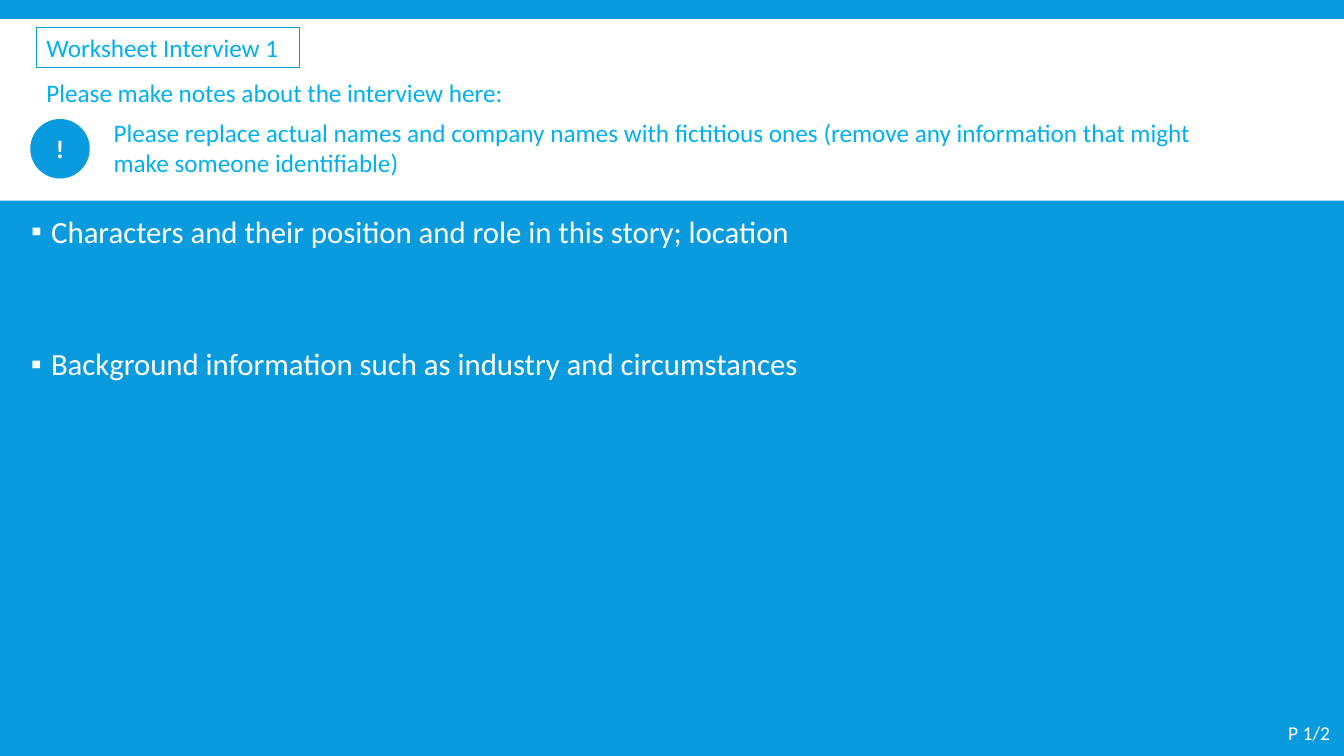
from dataclasses import dataclass

from lxml import etree
from pptx import Presentation
from pptx import util as u
from pptx.dml.color import RGBColor
from pptx.enum import shapes, text
from pptx.oxml import ns

BLUE = RGBColor(0x09, 0x9B, 0xDD)
SKY = RGBColor(0x00, 0xB0, 0xF0)
WHITE = RGBColor(0xFF, 0xFF, 0xFF)


@dataclass(frozen=True)
class Area:
    left: float
    top: float
    width: float
    height: float

    def lengths(self) -> tuple:
        return tuple(u.Pt(n) for n in (self.left, self.top, self.width, self.height))


@dataclass(frozen=True)
class Label:
    wording: str
    area: Area
    size: float = 18
    color: RGBColor = SKY
    inset: float = 3.6
    wrap: bool = True


@dataclass(frozen=True)
class Question:
    wording: str
    area: Area


BAND = Area(0, 13.7, 960, 129.6)
HEADING = Area(26, 19.4, 188, 29)
WARNING_SIGN = Area(21.6, 85, 42.5, 42.5)
LABELS = [
    Label("Please make notes about the interview here:", Area(26, 52, 351, 29)),
    Label("Please replace actual names and company names with fictitious ones "
          "(remove any information that might make someone identifiable)",
          Area(74, 80, 802, 51)),
    Label("P 1/2", Area(913, 508, 47, 32), size=14, color=WHITE, inset=7.2, wrap=False),
]
QUESTIONS = [
    Question("Characters and their position and role in this story; location",
             Area(15, 151, 770, 99)),
    Question("Background information such as industry and circumstances",
             Area(15, 245.5, 770, 68)),
]


def place(box, area: Area) -> None:
    box.left, box.top, box.width, box.height = area.lengths()


def write(box, wording: str, *, size: float = 18, color: RGBColor = SKY,
          bold: bool = False, align=text.PP_ALIGN.LEFT, anchor=text.MSO_ANCHOR.TOP,
          inset: float = 3.6, wrap: bool = True):
    frame = box.text_frame
    frame.word_wrap = wrap
    frame.auto_size = text.MSO_AUTO_SIZE.NONE
    frame.vertical_anchor = anchor
    frame.margin_left = frame.margin_right = u.Pt(7.2)
    frame.margin_top = frame.margin_bottom = u.Pt(inset)
    para = frame.paragraphs[0]
    para.alignment = align
    para.space_before = u.Pt(0)
    span = para.add_run()
    span.text = wording
    span.font.name = "Calibri"
    span.font.size = u.Pt(size)
    span.font.bold = bold
    span.font.color.rgb = color
    return para


def add_bullet(para, color: RGBColor, indent: float) -> None:
    para.line_spacing = 0.9
    props = para._p.get_or_add_pPr()
    props.set("marL", str(u.Pt(indent)))
    props.set("indent", str(u.Pt(-indent)))
    tint = etree.SubElement(props, ns.qn("a:buClr"))
    etree.SubElement(tint, ns.qn("a:srgbClr"), val=str(color))
    etree.SubElement(props, ns.qn("a:buFont"), typeface="Arial")
    etree.SubElement(props, ns.qn("a:buChar"), char="▪")


def add_filled(page, kind, area: Area, color: RGBColor):
    box = page.shapes.add_shape(kind, *area.lengths())
    box.shadow.inherit = False
    box.fill.solid()
    box.fill.fore_color.rgb = color
    box.line.fill.background()
    return box


def main() -> None:
    deck = Presentation()
    deck.slide_width, deck.slide_height = u.Pt(960), u.Pt(540)
    page = deck.slides.add_slide(deck.slide_layouts[1])
    page.background.fill.solid()
    page.background.fill.fore_color.rgb = BLUE

    band = add_filled(page, shapes.MSO_SHAPE.RECTANGLE, BAND, WHITE)
    page.shapes.element.insert(2, band.element)

    heading = page.shapes.title
    place(heading, HEADING)
    heading.line.color.rgb = BLUE
    heading.line.width = u.Pt(0.75)
    write(heading, "Worksheet Interview 1")

    body = page.placeholders[1]
    extra = page.shapes.add_textbox(*QUESTIONS[1].area.lengths())
    for box, question in zip((body, extra), QUESTIONS):
        place(box, question.area)
        para = write(box, question.wording, size=22, color=WHITE)
        add_bullet(para, WHITE, 14.4)

    for label in LABELS:
        box = page.shapes.add_textbox(*label.area.lengths())
        write(box, label.wording, size=label.size, color=label.color,
              inset=label.inset, wrap=label.wrap)

    sign = add_filled(page, shapes.MSO_SHAPE.OVAL, WARNING_SIGN, BLUE)
    write(sign, "!", color=WHITE, bold=True, align=text.PP_ALIGN.CENTER,
          anchor=text.MSO_ANCHOR.MIDDLE)

    deck.save("out.pptx")


if __name__ == "__main__":
    main()
